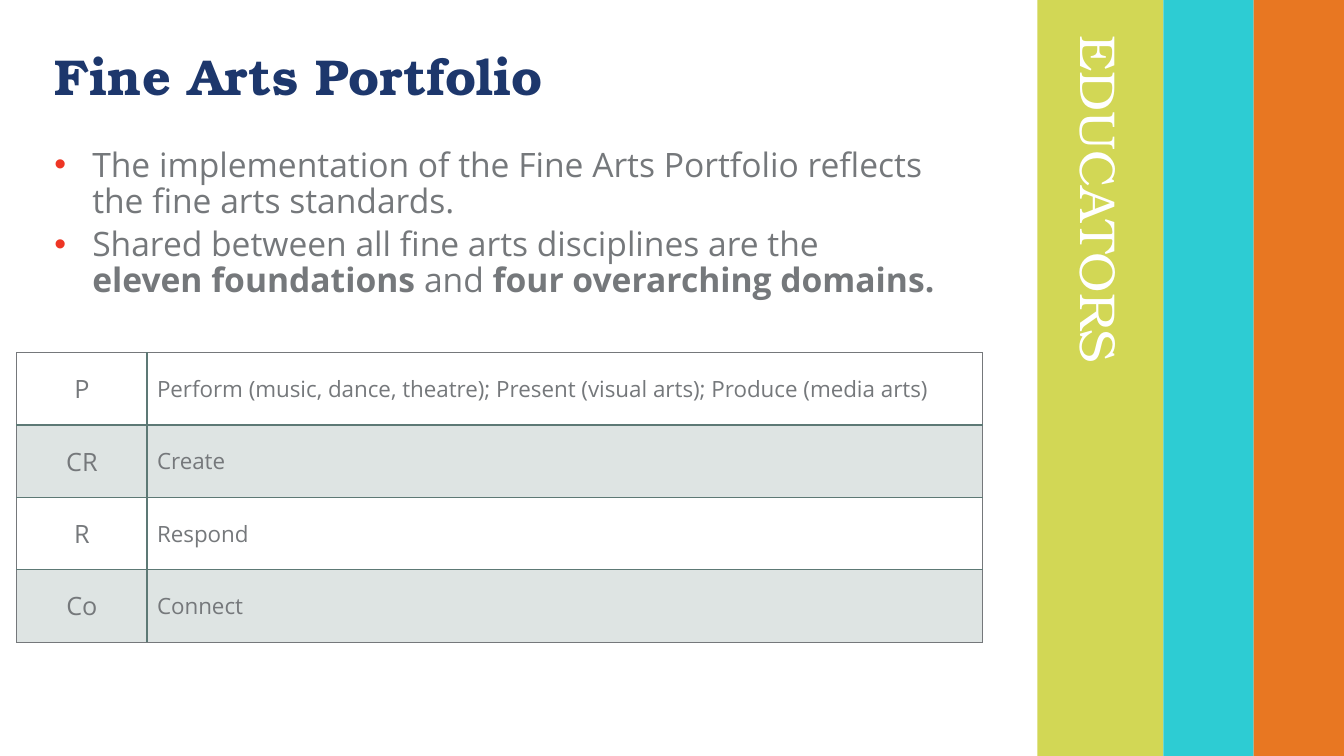
from lxml.etree import SubElement
from pptx import Presentation
from pptx.dml.color import RGBColor
from pptx.enum.shapes import MSO_SHAPE
from pptx.enum.text import MSO_ANCHOR, MSO_AUTO_SIZE, PP_ALIGN
from pptx.oxml.ns import qn
from pptx.util import Pt

COLORS = {
    "lime": "D2D755", "teal": "2DCCD3", "orange": "E87722", "white": "FFFFFF",
    "navy": "1D376C", "gray": "75787B", "red": "EE3524", "green": "5D7975",
}
SERIF, SANS = "TeX Gyre Bonum", "Open Sans"
STRIPES = [("lime", 741, 90), ("teal", 831, 64.5), ("orange", 895.5, 64.5)]
BULLETS = [
    [("The implementation of the Fine Arts Portfolio reflects the fine arts standards.", False)],
    [("Shared between all fine arts disciplines are the ", False),
     ("eleven foundations ", True), ("and ", False),
     ("four overarching domains.", True)],
]
DOMAINS = [
    ("P", "Perform (music, dance, theatre); Present (visual arts); Produce (media arts)"),
    ("CR", "Create"),
    ("R", "Respond"),
    ("Co", "Connect"),
]


def apply_format(target, values):
    """Set every attribute named in a dict of format values."""
    for name, value in values.items():
        setattr(target, name, value)


def place(shape, left, top, width, height):
    """Move and size a shape, in points."""
    apply_format(shape, {"left": Pt(left), "top": Pt(top),
                         "width": Pt(width), "height": Pt(height)})


def add_span(para, text, font, size, color, bold=False):
    """Append formatted text to a paragraph."""
    span = para.add_run()
    span.text = text
    apply_format(span.font, {"name": font, "size": Pt(size), "bold": bold})
    span.font.color.rgb = RGBColor.from_string(COLORS[color])


def add_stripe(page, color, left, width):
    """Draw one full-height colour stripe."""
    stripe = page.shapes.add_shape(MSO_SHAPE.RECTANGLE, Pt(left), 0, Pt(width), Pt(540))
    stripe.shadow.inherit = False
    stripe.fill.solid()
    stripe.fill.fore_color.rgb = RGBColor.from_string(COLORS[color])
    stripe.line.fill.background()


def add_side_label(page, text):
    """Write the vertical label on the first stripe."""
    box = page.shapes.add_textbox(Pt(620.6), Pt(157.7), Pt(330.5), Pt(51))
    box.rotation = 90
    box.text_frame.word_wrap = True
    add_span(box.text_frame.paragraphs[0], text, SERIF, 36, "white")


def fill_title(title, text):
    """Place and format the title placeholder."""
    place(title, 31.7, 18, 644.4, 72)
    apply_format(title.text_frame, {"vertical_anchor": MSO_ANCHOR.MIDDLE,
                                    "auto_size": MSO_AUTO_SIZE.NONE})
    para = title.text_frame.paragraphs[0]
    para.alignment = PP_ALIGN.LEFT
    add_span(para, text, SERIF, 36, "navy", True)


def set_bullet(para):
    """Give a paragraph a red bullet with a hanging indent."""
    props = para._p.get_or_add_pPr()
    props.set("marL", str(Pt(27)))
    props.set("indent", str(-Pt(27)))
    SubElement(SubElement(props, qn("a:buClr")), qn("a:srgbClr"), val=COLORS["red"])
    SubElement(props, qn("a:buFont"), typeface="Arial")
    SubElement(props, qn("a:buChar"), char="•")


def fill_body(body, bullets):
    """Place the body placeholder and write its bulleted list."""
    place(body, 31.7, 102.2, 644.4, 356.4)
    frame = body.text_frame
    apply_format(frame, {"vertical_anchor": MSO_ANCHOR.TOP,
                         "auto_size": MSO_AUTO_SIZE.NONE})
    for index, spans in enumerate(bullets):
        para = frame.add_paragraph() if index else frame.paragraphs[0]
        apply_format(para, {"alignment": PP_ALIGN.LEFT, "line_spacing": 0.9,
                            "space_before": Pt(4.8)})
        set_bullet(para)
        for text, bold in spans:
            add_span(para, text, SANS, 24, "gray", bold)


def set_border(cell, side, color, width):
    """Draw one side of a table cell."""
    line = SubElement(cell._tc.get_or_add_tcPr(), qn(f"a:ln{side}"), w=str(Pt(width)))
    SubElement(SubElement(line, qn("a:solidFill")), qn("a:srgbClr"), val=COLORS[color])


def shade(cell, banded):
    """Fill a banded cell with translucent green and leave others clear."""
    if not banded:
        cell.fill.background()
        return
    cell.fill.solid()
    cell.fill.fore_color.rgb = RGBColor.from_string(COLORS["green"])
    tint = cell._tc.tcPr.find(f"{qn('a:solidFill')}/{qn('a:srgbClr')}")
    SubElement(tint, qn("a:alpha"), val="20000")


def add_domain_table(page, domains):
    """Build the table of domain codes and meanings."""
    last = len(domains) - 1
    table = page.shapes.add_table(len(domains), 2, Pt(12), Pt(252),
                                  Pt(690), Pt(206.8)).table
    apply_format(table, {"first_row": False, "horz_banding": False})
    for column, width in zip(table.columns, (93, 597)):
        column.width = Pt(width)
    for row, texts in enumerate(domains):
        table.rows[row].height = Pt(51.7)
        for col, text in enumerate(texts):
            cell = table.cell(row, col)
            cell.vertical_anchor = MSO_ANCHOR.MIDDLE
            para = cell.text_frame.paragraphs[0]
            para.alignment = PP_ALIGN.LEFT if col else PP_ALIGN.CENTER
            add_span(para, text, SANS, 16 if col else 18, "gray")
            outer = {"L": col == 0, "R": col == 1, "T": row == 0, "B": row == last}
            heavy = {0: "B", 1: "T"}.get(row)
            for side, edge in outer.items():
                set_border(cell, side, "gray" if edge else "green",
                           2 if side == heavy else 1)
            shade(cell, row % 2 == 1)


def main():
    """Build and save the slide."""
    deck = Presentation()
    apply_format(deck, {"slide_width": Pt(960), "slide_height": Pt(540)})
    page = deck.slides.add_slide(deck.slide_layouts[1])
    for stripe in STRIPES:
        add_stripe(page, *stripe)
    add_side_label(page, "EDUCATORS")
    fill_body(page.placeholders[1], BULLETS)
    fill_title(page.shapes.title, "Fine Arts Portfolio")
    add_domain_table(page, DOMAINS)
    deck.save("out.pptx")


if __name__ == "__main__":
    main()
